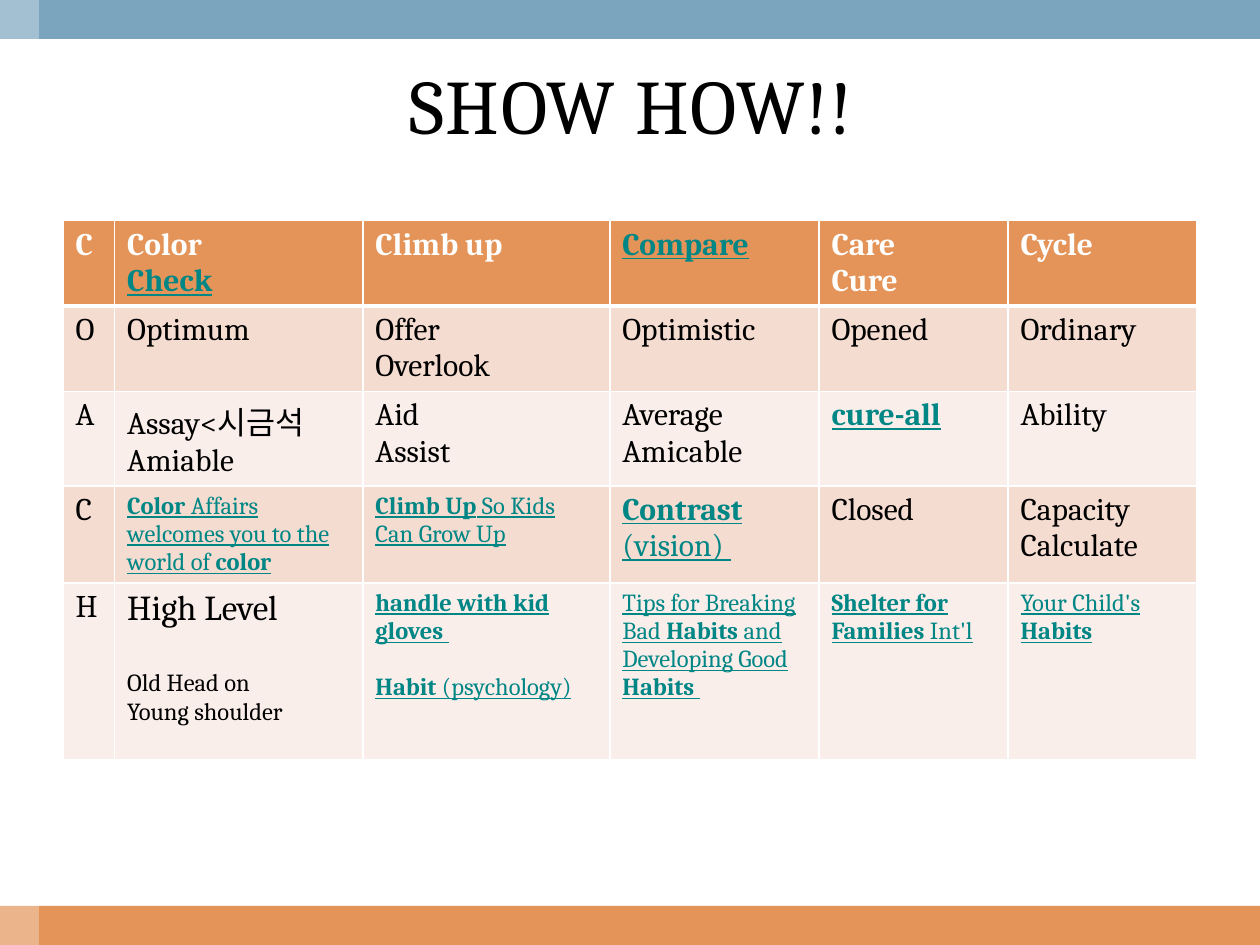
from collections import namedtuple

from lxml import etree
from pptx import Presentation
from pptx.dml.color import RGBColor
from pptx.enum.shapes import MSO_SHAPE
from pptx.enum.text import MSO_ANCHOR, PP_ALIGN
from pptx.oxml.ns import qn
from pptx.util import Inches, Pt

RECT = MSO_SHAPE.RECTANGLE
MIDDLE = MSO_ANCHOR.MIDDLE
CENTER = PP_ALIGN.CENTER

W, H = 10, 7.5
BAND = 0.31
FONT = "Cambria"
COLORS = {
    "blue": "7BA5BE",
    "orange": "E49458",
    "dark_row": "F5DCD1",
    "light_row": "FAEEEA",
    "link": "008685",
    "black": "000000",
    "white": "FFFFFF",
}
COLS = [0.41, 1.97, 1.96, 1.66, 1.5, 1.5]
ROWS = [0.67, 0.67, 0.75, 0.77, 1.4]

# A paragraph of a cell; asterisks enclose its bold words
Line = namedtuple("Line", "text size linked before", defaults=(18, False, 0))


def link(text, size=14, before=0):
    return Line(text, size, True, before)


CELLS = [
    [["C"], ["Color", link("Check", 18)], ["Climb up"],
     [link("Compare", 18)], ["Care", "Cure"], ["Cycle"]],
    [["O"], ["Optimum"], ["Offer", "Overlook"],
     ["Optimistic"], ["Opened"], ["Ordinary"]],
    [["A"], ["Assay<시금석", "Amiable"], ["Aid", "Assist"],
     ["Average", "Amicable"], [link("*cure-all*", 18)], ["Ability"]],
    [["C"], [link("*Color* Affairs welcomes you to the world of *color*")],
     [link("*Climb Up* So Kids Can Grow Up")],
     [link("*Contrast* (vision) ", 18)], ["Closed"], ["Capacity", "Calculate"]],
    [["H"],
     [Line("High Level", 20), Line("Old Head on", 14, before=23),
      Line("Young shoulder", 14)],
     [link("*handle with kid gloves* "), link("*Habit* (psychology)", before=16)],
     [link("Tips for Breaking Bad *Habits* and Developing Good *Habits* ")],
     [link("*Shelter for Families* Int'l")],
     [link("Your Child's *Habits*")]],
]


def color(name):
    return RGBColor.from_string(COLORS[name])


def add_bar(slide, box, fill, opacity=100):
    sp = slide.shapes.add_shape(RECT, *(Inches(v) for v in box))
    sp.shadow.inherit = False
    sp.fill.solid()
    sp.fill.fore_color.rgb = color(fill)
    sp.line.fill.background()
    if opacity < 100:
        clr = sp._element.spPr.find(".//" + qn("a:srgbClr"))
        etree.SubElement(clr, qn("a:alpha"), val=str(opacity * 1000))


def add_frame(slide, box):
    left, top, width, height = box
    add_bar(slide, (left, top + height - BAND, width, BAND), "orange")
    add_bar(slide, (left, top, width, BAND), "blue")
    add_bar(slide, (left, top, BAND, height), "white", 30)


def add_title(slide, box, text):
    tf = slide.shapes.add_textbox(*(Inches(v) for v in box)).text_frame
    tf.word_wrap = True
    tf.vertical_anchor = MIDDLE
    tf.text = text
    p = tf.paragraphs[0]
    p.alignment = CENTER
    r = p.runs[0]
    r.font.name, r.font.size = FONT, Pt(44)
    r.font.color.rgb = color("black")
    r._r.get_or_add_rPr().set("spc", "100")


def set_borders(cell, top, bottom):
    """White cell borders, with widths in points."""
    tcPr = cell._tc.get_or_add_tcPr()
    widths = {"lnL": 1, "lnR": 1, "lnT": top, "lnB": bottom}
    for i, (tag, width) in enumerate(widths.items()):
        ln = etree.Element(qn("a:" + tag), w=str(Pt(width)))
        fill = etree.SubElement(ln, qn("a:solidFill"))
        etree.SubElement(fill, qn("a:srgbClr"), val=COLORS["white"])
        tcPr.insert(i, ln)


def write_line(p, line, header):
    p.space_before = Pt(line.before)
    for i, part in enumerate(line.text.split("*")):
        if not part:
            continue
        r = p.add_run()
        r.text = part
        r.font.name, r.font.size = FONT, Pt(line.size)
        r.font.bold = header or i % 2 == 1
        r.font.underline = line.linked
        plain = "white" if header else "black"
        r.font.color.rgb = color("link" if line.linked else plain)


def fill_cell(cell, lines, row):
    header = row == 0
    band = "dark_row" if row % 2 else "light_row"
    cell.fill.solid()
    cell.fill.fore_color.rgb = color("orange" if header else band)
    set_borders(cell, 3 if row == 1 else 1, 3 if header else 1)
    tf = cell.text_frame
    for i, line in enumerate(lines):
        p = tf.add_paragraph() if i else tf.paragraphs[0]
        write_line(p, Line(line) if isinstance(line, str) else line, header)


def add_word_table(slide, left, top):
    size = (left, top, sum(COLS), sum(ROWS))
    table = slide.shapes.add_table(
        len(ROWS), len(COLS), *(Inches(v) for v in size)).table
    for column, width in zip(table.columns, COLS):
        column.width = Inches(width)
    for i, height in enumerate(ROWS):
        table.rows[i].height = Inches(height)
        for j, lines in enumerate(CELLS[i]):
            fill_cell(table.cell(i, j), lines, i)


def main():
    prs = Presentation()
    prs.slide_width, prs.slide_height = Inches(W), Inches(H)
    slide = prs.slides.add_slide(prs.slide_layouts[6])
    add_frame(slide, (0, 0, W, H))
    add_word_table(slide, 0.5, 1.75)
    add_title(slide, (0.33, BAND, 9.36, 1.03), "SHOW HOW!!")
    prs.save("out.pptx")


if __name__ == "__main__":
    main()
